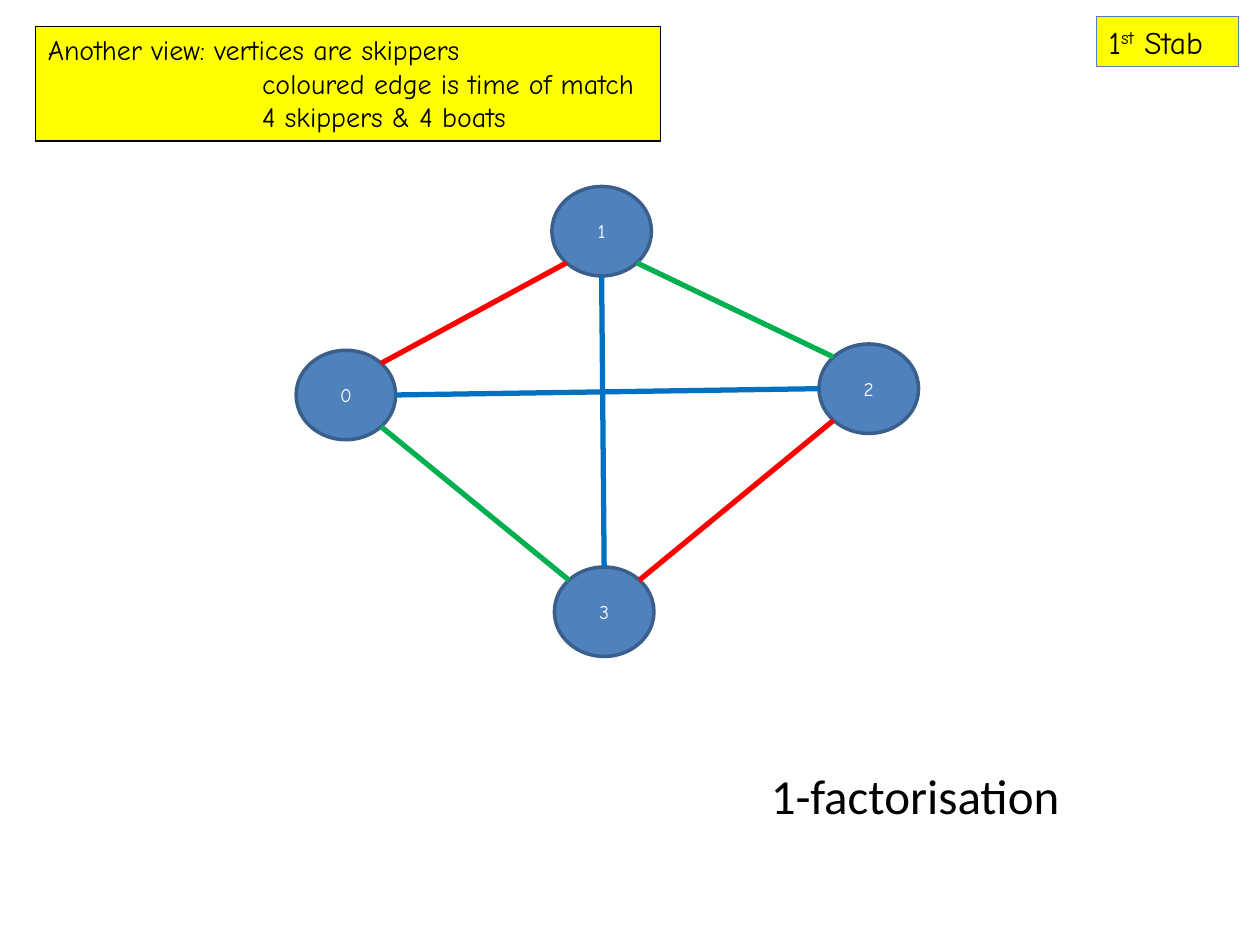
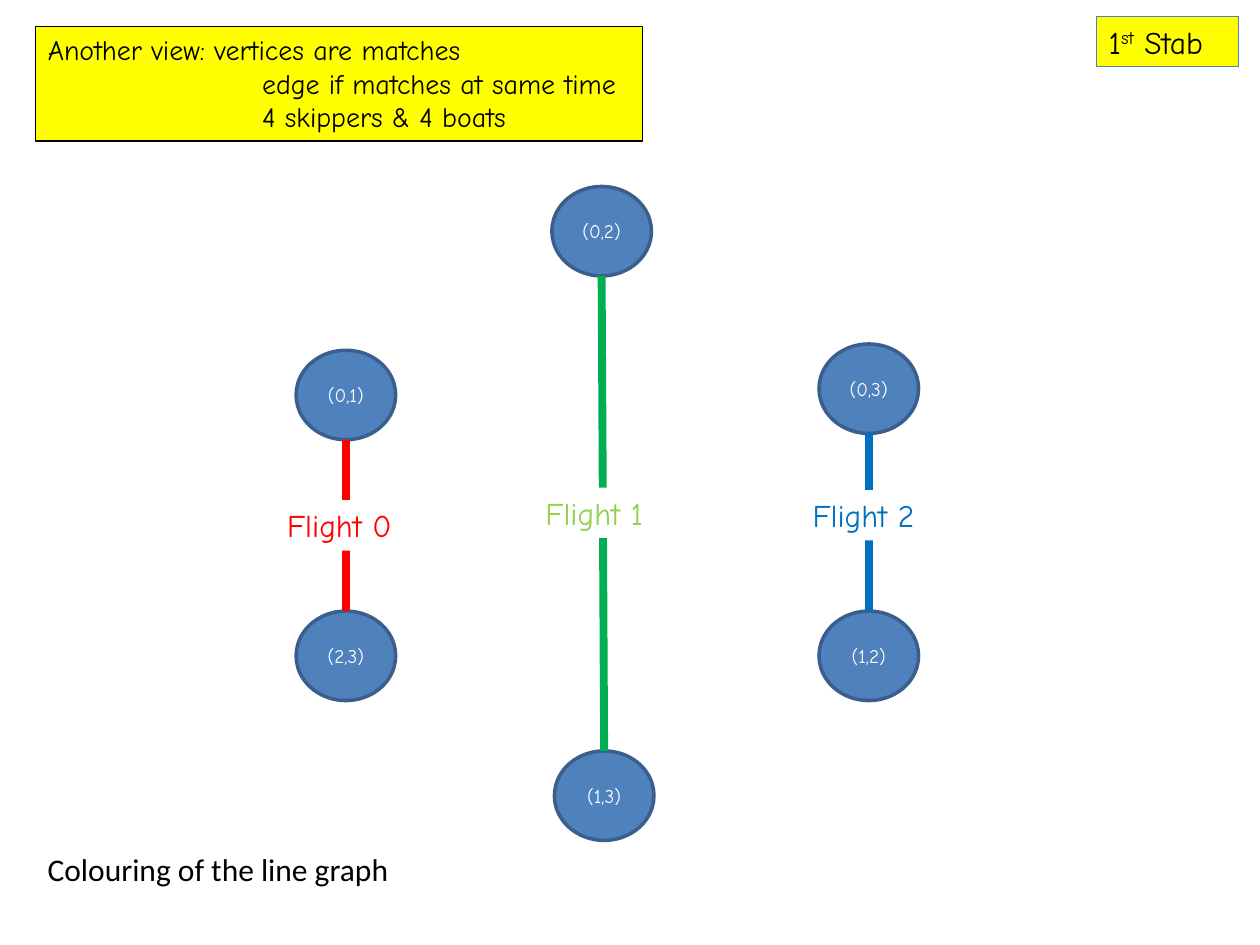
import math
from dataclasses import dataclass

import pptx
import pptx.dml.color
import pptx.enum.shapes
import pptx.enum.text
import pptx.oxml.ns
import pptx.presentation
import pptx.shapes.base
import pptx.slide
import pptx.text.text
import pptx.util
from lxml import etree
from pptx.util import Inches

HAND = "Comic Neue"
PLAIN = "Calibri"
BLACK, WHITE, YELLOW = "000000", "FFFFFF", "FFFF00"
RED, GREEN, BLUE, LIME = "FF0000", "00B050", "0070C0", "92D050"
NODE_FILL, NODE_LINE = "4F81BD", "3A5F8C"
NODE_WIDTH, NODE_HEIGHT = 0.79, 0.71
HEADING_INDENT = 1.7
UP, LEFT, DOWN, RIGHT = -90, 180, 90, 0
UP_LEFT, UP_RIGHT, DOWN_LEFT, DOWN_RIGHT = -135, -45, 135, 45


@dataclass(frozen=True)
class Node:
    label: str
    left: float
    top: float

    def rim(self, angle: int) -> tuple[float, float]:
        turn = math.radians(angle)
        return (self.left + NODE_WIDTH / 2 * (1 + math.cos(turn)),
                self.top + NODE_HEIGHT / 2 * (1 + math.sin(turn)))


@dataclass(frozen=True)
class Edge:
    start: Node
    start_angle: int
    end: Node
    end_angle: int
    colour: str


@dataclass(frozen=True)
class Caption:
    text: str
    left: float
    top: float
    width: float
    height: float = 0.4
    size: float = 18
    font: str = HAND
    colour: str = BLACK
    fill: str | None = None


@dataclass(frozen=True)
class Page:
    heading: list[str]
    heading_width: float
    nodes: list[Node]
    edges: list[Edge]
    edge_weight: float
    captions: list[Caption]


def rgb(colour: str) -> pptx.dml.color.RGBColor:
    return pptx.dml.color.RGBColor.from_string(colour)


def paint(shape: pptx.shapes.base.BaseShape, fill: str, line: str, weight: float) -> None:
    shape.fill.solid()
    shape.fill.fore_color.rgb = rgb(fill)
    shape.line.color.rgb = rgb(line)
    shape.line.width = pptx.util.Pt(weight)


def style(para: pptx.text.text._Paragraph, size: float, font: str, colour: str,
          align: pptx.enum.text.PP_ALIGN = pptx.enum.text.PP_ALIGN.LEFT) -> None:
    para.alignment = align
    para.font.size = pptx.util.Pt(size)
    para.font.name = font
    para.font.color.rgb = rgb(colour)


def settle(frame: pptx.text.text.TextFrame, anchor: pptx.enum.text.MSO_ANCHOR) -> None:
    frame.word_wrap = True
    frame.auto_size = pptx.enum.text.MSO_AUTO_SIZE.NONE
    frame.vertical_anchor = anchor


def add_heading(slide: pptx.slide.Slide, lines: list[str], width: float) -> None:
    title = slide.shapes.title
    title.left, title.top = Inches(0.28), Inches(0.21)
    title.width, title.height = Inches(width), Inches(0.91)
    paint(title, YELLOW, BLACK, 0.75)
    frame = title.text_frame
    settle(frame, pptx.enum.text.MSO_ANCHOR.TOP)
    frame.text = "\n".join(lines)
    for number, para in enumerate(frame.paragraphs):
        if number:
            para._p.get_or_add_pPr().set("marL", str(Inches(HEADING_INDENT)))
        style(para, 16, HAND, BLACK)


def add_stab_tag(slide: pptx.slide.Slide) -> None:
    tag = slide.shapes.add_shape(pptx.enum.shapes.MSO_SHAPE.RECTANGLE,
                                 Inches(8.7), Inches(0.13), Inches(1.13), Inches(0.4))
    tag.shadow.inherit = False
    paint(tag, YELLOW, NODE_FILL, 0.75)
    settle(tag.text_frame, pptx.enum.text.MSO_ANCHOR.TOP)
    para = tag.text_frame.paragraphs[0]
    style(para, 18, HAND, BLACK)
    for text in ("1", "st", " Stab"):
        span = para.add_run()
        span.text = text
        if text == "st":
            span.font._element.set("baseline", "30000")


def add_node(slide: pptx.slide.Slide, node: Node) -> None:
    oval = slide.shapes.add_shape(pptx.enum.shapes.MSO_SHAPE.OVAL,
                                  Inches(node.left), Inches(node.top),
                                  Inches(NODE_WIDTH), Inches(NODE_HEIGHT))
    oval.shadow.inherit = False
    paint(oval, NODE_FILL, NODE_LINE, 2)
    settle(oval.text_frame, pptx.enum.text.MSO_ANCHOR.MIDDLE)
    oval.text_frame.text = node.label
    style(oval.text_frame.paragraphs[0], 11, HAND, WHITE, pptx.enum.text.PP_ALIGN.CENTER)


def add_edge(slide: pptx.slide.Slide, edge: Edge, weight: float) -> None:
    ends = edge.start.rim(edge.start_angle) + edge.end.rim(edge.end_angle)
    line = slide.shapes.add_connector(pptx.enum.shapes.MSO_CONNECTOR.STRAIGHT,
                                      *(Inches(value) for value in ends))
    line.line.color.rgb = rgb(edge.colour)
    line.line.width = pptx.util.Pt(weight)
    etree.SubElement(line._element.spPr, pptx.oxml.ns.qn("a:effectLst"))


def add_caption(slide: pptx.slide.Slide, caption: Caption) -> None:
    box = slide.shapes.add_textbox(Inches(caption.left), Inches(caption.top),
                                   Inches(caption.width), Inches(caption.height))
    if caption.fill:
        box.fill.solid()
        box.fill.fore_color.rgb = rgb(caption.fill)
    settle(box.text_frame, pptx.enum.text.MSO_ANCHOR.TOP)
    box.text_frame.text = caption.text
    style(box.text_frame.paragraphs[0], caption.size, caption.font, caption.colour)


def add_page(deck: pptx.presentation.Presentation, page: Page) -> None:
    slide = deck.slides.add_slide(deck.slide_layouts.get_by_name("Title Only"))
    add_heading(slide, page.heading, page.heading_width)
    add_stab_tag(slide)
    for node in page.nodes:
        add_node(slide, node)
    for edge in page.edges:
        add_edge(slide, edge, page.edge_weight)
    for caption in page.captions:
        add_caption(slide, caption)


def skippers_page() -> Page:
    west, east = Node("0", 2.35, 2.78), Node("2", 6.5, 2.73)
    north, south = Node("1", 4.38, 1.48), Node("3", 4.4, 4.5)
    return Page(
        heading=["Another view: vertices are skippers",
                 "coloured edge is time of match",
                 "4 skippers & 4 boats"],
        heading_width=4.96,
        nodes=[west, east, north, south],
        edges=[Edge(west, UP_RIGHT, north, DOWN_LEFT, RED),
               Edge(south, UP_RIGHT, east, DOWN_LEFT, RED),
               Edge(west, DOWN_RIGHT, south, UP_LEFT, GREEN),
               Edge(north, DOWN_RIGHT, east, UP_LEFT, GREEN),
               Edge(north, DOWN, south, UP, BLUE),
               Edge(west, RIGHT, east, LEFT, BLUE)],
        edge_weight=3,
        captions=[Caption("1-factorisation", 6.02, 6.03, 2.52, 0.57, 28, PLAIN)],
    )


def matches_page() -> Page:
    flights = [
        (Node("(0,1)", 2.35, 2.78), Node("(2,3)", 2.35, 4.85), RED,
         Caption("Flight 0", 2.18, 3.97, 1.12, colour=RED, fill=WHITE)),
        (Node("(0,2)", 4.38, 1.48), Node("(1,3)", 4.4, 5.96), GREEN,
         Caption("Flight 1", 4.23, 3.87, 1.08, colour=LIME, fill=WHITE)),
        (Node("(0,3)", 6.5, 2.73), Node("(1,2)", 6.5, 4.85), BLUE,
         Caption("Flight 2", 6.35, 3.89, 1.12, colour=BLUE, fill=WHITE)),
    ]
    return Page(
        heading=["Another view: vertices are matches",
                 "edge if matches at same time",
                 "4 skippers & 4 boats"],
        heading_width=4.82,
        nodes=[node for upper, lower, _, _ in flights for node in (upper, lower)],
        edges=[Edge(lower, UP, upper, DOWN, colour) for upper, lower, colour, _ in flights],
        edge_weight=4.5,
        captions=[label for _, _, _, label in flights]
        + [Caption("Colouring of the line graph", 0.28, 6.7, 2.94, font=PLAIN)],
    )


def main() -> None:
    deck = pptx.Presentation()
    deck.slide_width, deck.slide_height = Inches(10), Inches(7.5)
    for page in (skippers_page(), matches_page()):
        add_page(deck, page)
    deck.save("out.pptx")


if __name__ == "__main__":
    main()
